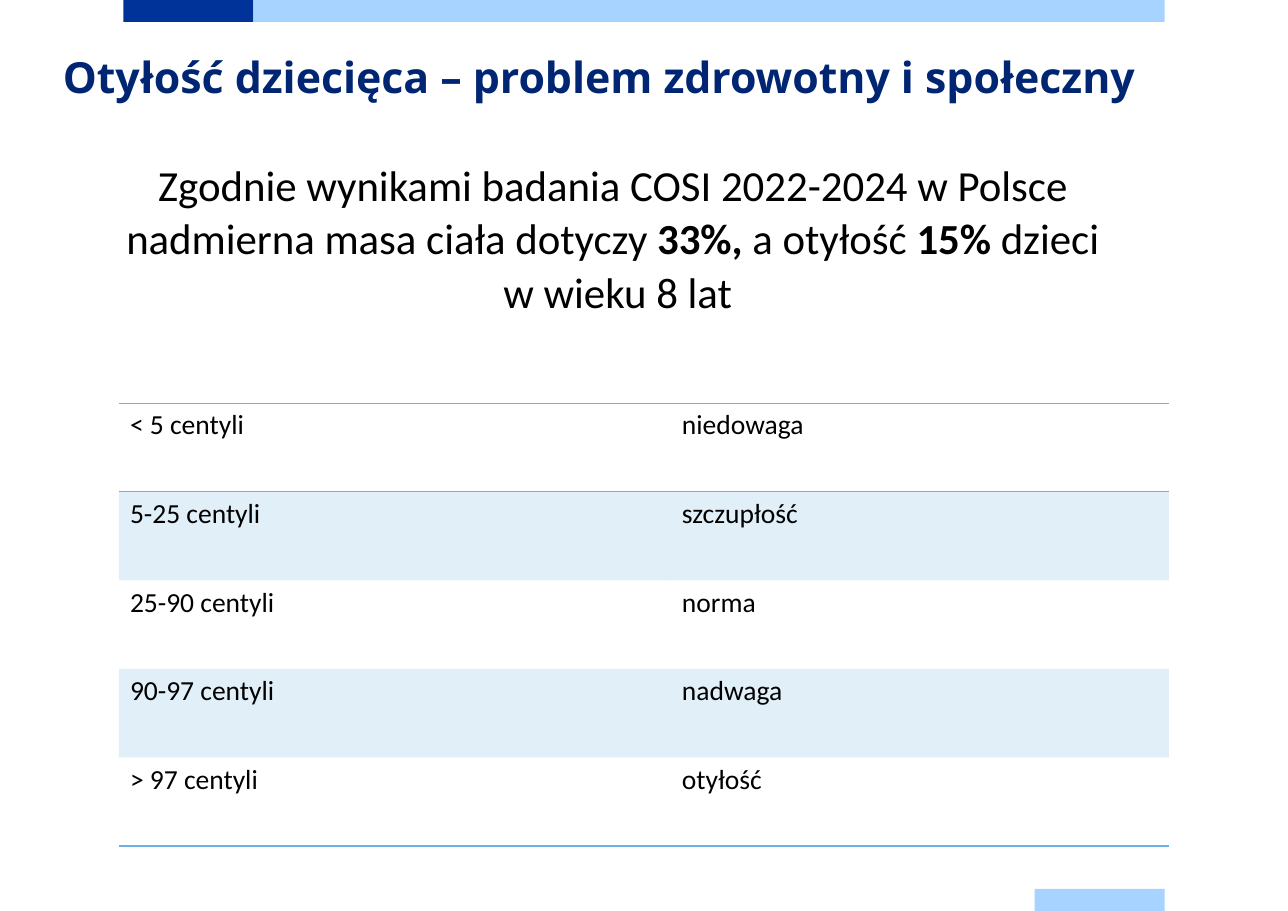
import pptx
import pptx.util
import pptx.dml.color
import pptx.enum.shapes
import pptx.enum.text
import pptx.oxml.ns
import lxml.etree

RGBColor = pptx.dml.color.RGBColor
NAVY = RGBColor(0x00, 0x33, 0x99)
LIGHT_BLUE = RGBColor(0xA6, 0xD3, 0xFF)
TITLE_BLUE = RGBColor(0x00, 0x26, 0x73)
TABLE_BLUE = RGBColor(0x6B, 0xB1, 0xE2)
BLACK = RGBColor(0x00, 0x00, 0x00)

EMU_PER_PX = 9144  # 100 px to the inch
NO_GRID_STYLE = "{2D5ABB26-0587-4C30-8999-92F81FD0307C}"

TITLE = "Otyłość dziecięca – problem zdrowotny i społeczny"
# Each line is a list of (text, bold) runs
FINDING = [
    [("Zgodnie wynikami badania COSI 2022-2024 w Polsce ", False)],
    [("nadmierna masa ciała dotyczy ", False), ("33%, ", True),
     ("a otyłość ", False), ("15% ", True), ("dzieci ", False)],
    [("w wieku 8 lat", False)],
]
CENTILES = [
    ("< 5 centyli", "niedowaga"),
    ("5-25 centyli", "szczupłość"),
    ("25-90 centyli", "norma"),
    ("90-97 centyli", "nadwaga"),
    ("> 97 centyli", "otyłość"),
]


def px(value):
    return pptx.util.Emu(value * EMU_PER_PX)


def box(left, top, width, height):
    return px(left), px(top), px(width), px(height)


def format_font(font, name, size, color, bold=False):
    font.name = name
    font.size = pptx.util.Pt(size)
    font.color.rgb = color
    font.bold = bold


def prepare_frame(text_frame):
    text_frame.margin_left = text_frame.margin_right = 0
    text_frame.margin_top = text_frame.margin_bottom = 0
    text_frame.word_wrap = True
    text_frame.auto_size = pptx.enum.text.MSO_AUTO_SIZE.NONE
    text_frame.vertical_anchor = pptx.enum.text.MSO_ANCHOR.TOP


def add_bar(slide, left, top, width, color):
    shape = slide.shapes.add_shape(
        pptx.enum.shapes.MSO_SHAPE.RECTANGLE, *box(left, top, width, 20))
    shape.shadow.inherit = False
    shape.fill.solid()
    shape.fill.fore_color.rgb = color
    shape.line.fill.background()


def set_title(slide):
    title = slide.shapes.title
    title.left, title.top, title.width, title.height = box(57, 59, 1110, 73)
    prepare_frame(title.text_frame)
    title.text_frame.text = TITLE
    paragraph = title.text_frame.paragraphs[0]
    paragraph.alignment = pptx.enum.text.PP_ALIGN.LEFT
    paragraph.line_spacing = pptx.util.Pt(24)
    paragraph.space_before = pptx.util.Pt(0)
    format_font(paragraph.runs[0].font, "Open Sans", 28, TITLE_BLUE, True)


def add_finding(slide):
    text_frame = slide.shapes.add_textbox(*box(96, 157, 929, 186)).text_frame
    prepare_frame(text_frame)
    for index, line in enumerate(FINDING):
        paragraph = text_frame.add_paragraph() if index else text_frame.paragraphs[0]
        paragraph.alignment = pptx.enum.text.PP_ALIGN.CENTER
        paragraph.line_spacing = pptx.util.Pt(24)
        paragraph.space_before = pptx.util.Pt(11 if index else 0)
        for text, bold in line:
            run = paragraph.add_run()
            run.text = text
            format_font(run.font, "Calibri", 28, BLACK, bold)


def add_border(cell, side):
    qn = pptx.oxml.ns.qn
    line = lxml.etree.SubElement(
        cell._tc.get_or_add_tcPr(), qn(f"a:ln{side}"), w=str(pptx.util.Pt(1)))
    fill = lxml.etree.SubElement(line, qn("a:solidFill"))
    lxml.etree.SubElement(fill, qn("a:srgbClr"), val=str(TABLE_BLUE))


def fill_cell(cell, tinted):
    if not tinted:
        cell.fill.background()
        return
    cell.fill.solid()
    cell.fill.fore_color.rgb = TABLE_BLUE
    qn = pptx.oxml.ns.qn
    color = cell._tc.tcPr.find(f"{qn('a:solidFill')}/{qn('a:srgbClr')}")
    lxml.etree.SubElement(color, qn("a:alpha"), val="20000")


def add_centile_table(slide):
    table = slide.shapes.add_table(
        len(CENTILES), 2, *box(108, 366, 953, 402)).table
    table.first_row = table.horz_banding = False
    table._tbl.tblPr.find(pptx.oxml.ns.qn("a:tableStyleId")).text = NO_GRID_STYLE
    for column, width in zip(table.columns, (501, 452)):
        column.width = px(width)

    last = len(CENTILES) - 1
    for row, texts in enumerate(CENTILES):
        sides = "TB" if row == 0 else "B" if row == last else ""
        for column, text in enumerate(texts):
            cell = table.cell(row, column)
            cell.text_frame.text = text
            format_font(cell.text_frame.paragraphs[0].runs[0].font,
                        "Calibri", 18, BLACK)
            for side in sides:
                add_border(cell, side)
            fill_cell(cell, tinted=row % 2 == 1)


def main():
    presentation = pptx.Presentation()
    presentation.slide_width = px(1169)
    presentation.slide_height = px(827)
    slide = presentation.slides.add_slide(
        presentation.slide_layouts.get_by_name("Title Only"))

    # Bars at the slide edges
    add_bar(slide, 112, 0, 118, NAVY)
    add_bar(slide, 230, 0, 827, LIGHT_BLUE)
    add_bar(slide, 939, 807, 118, LIGHT_BLUE)

    # Title, key finding and centile table
    set_title(slide)
    add_finding(slide)
    add_centile_table(slide)

    presentation.save("out.pptx")


if __name__ == "__main__":
    main()
